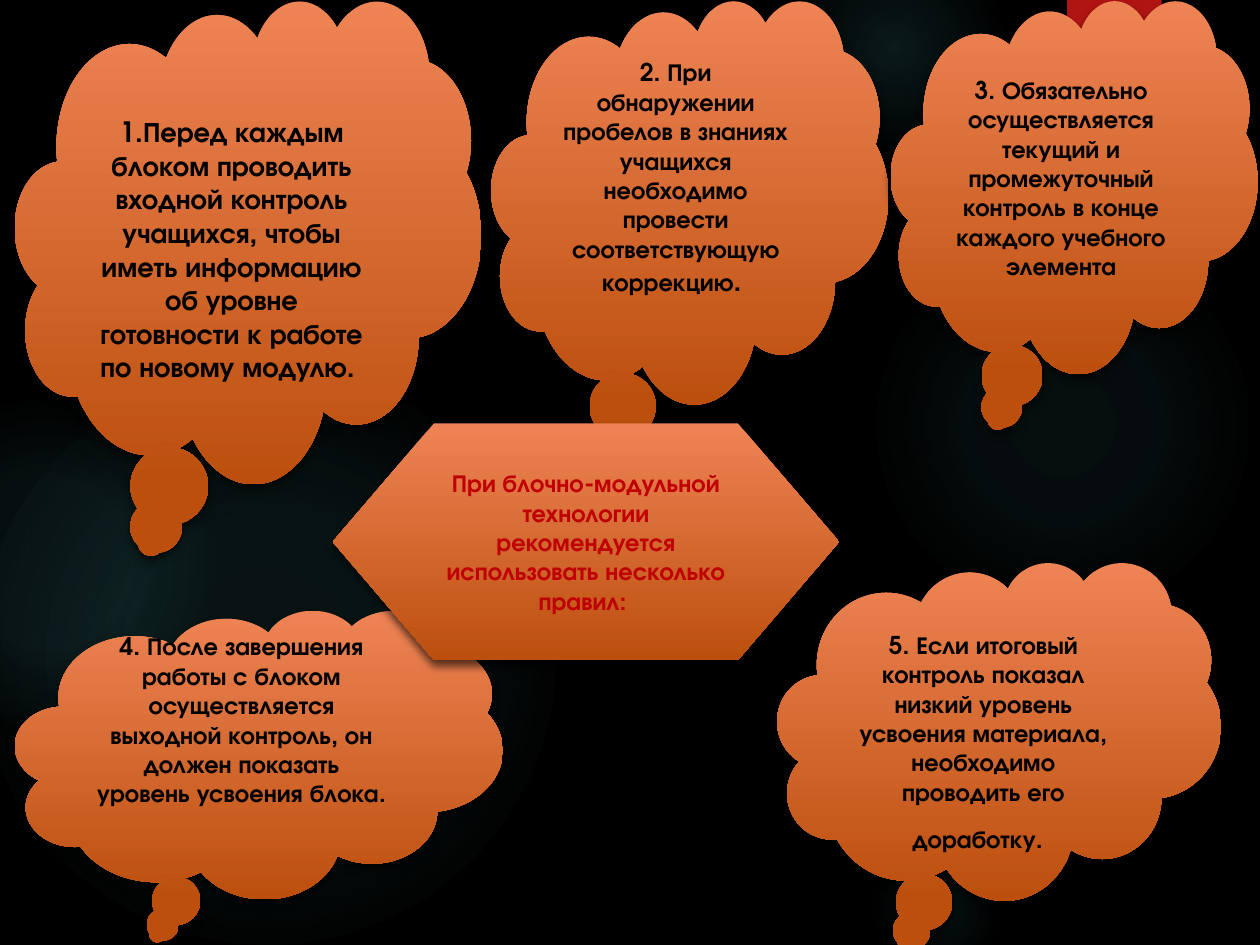
from dataclasses import dataclass

from lxml import etree
from pptx import Presentation
from pptx.dml.color import RGBColor
from pptx.enum import shapes, text
from pptx.oxml import ns
from pptx.util import Inches, Pt


@dataclass(frozen=True)
class Theme:
    font: str = "TeX Gyre Adventor"
    background: str = "000000"
    glow: str = "50B9C1"
    ribbon: str = "B01513"
    top: str = "EE8455"
    bottom: str = "BC4F0E"
    ink: str = "000000"
    accent: str = "C00000"
    body: int = 14
    large: int = 16
    wide: int = 24


T = Theme()
KIND = shapes.MSO_SHAPE

GLOWS = [
    ((6.89, 1.83, 3.08), ((0, 7), (36, 6), (69, 0))),
    ((6.22, -0.5, 1.75), ((0, 14), (36, 7), (73, 0))),
    ((6.89, 6.67, 1.08), ((0, 9), (36, 5), (66, 0))),
    ((-0.17, 2.92, 4.58), ((0, 11), (36, 10), (75, 0))),
    ((-0.92, 3.17, 2.58), ((0, 8), (36, 8), (72, 0))),
]

RULES = [
    ((0.12, 0, 3.7, 3.83), 0.15,
     [("1.Перед каждым блоком проводить входной контроль учащихся, чтобы "
       "иметь информацию об уровне готовности к работе по новому модулю. ", T.large)]),
    ((3.9, 0, 3.15, 3.2), -0.12,
     [("2. При обнаружении пробелов в знаниях учащихся необходимо провести "
       "соответствующую коррекцию", T.body), (". ", T.large)]),
    ((7.07, 0, 2.91, 2.96), 0,
     [("3. Обязательно осуществляется текущий и промежуточный контроль "
       "в конце каждого учебного элемента", T.body)]),
    ((0.12, 4.84, 3.87, 2.29), -0.22,
     [("4. После завершения работы с блоком осуществляется выходной контроль, "
       "он должен показать уровень усвоения блока. ", T.body)]),
    ((6.17, 4.46, 3.52, 2.68), 0.16,
     [("5. Если итоговый контроль показал низкий уровень усвоения материала, "
       "необходимо проводить его доработку.", T.body), (" ", T.wide)]),
]

TOPIC = [("При блочно-модульной технологии рекомендуется использовать "
          "несколько правил: ", T.body)]


def rgb(value):
    return RGBColor.from_string(value)


def node(parent, tag, **attrs):
    return etree.SubElement(parent, ns.qn(tag), {k: str(v) for k, v in attrs.items()})


def add_plain(slide, kind, box):
    s = slide.shapes.add_shape(kind, *map(Inches, box))
    s.shadow.inherit = False
    s.line.fill.background()
    return s


def cast_shadow(s, alpha, blur, dist):
    effects = s._element.spPr.find(ns.qn("a:effectLst"))
    shadow = node(effects, "a:outerShdw", blurRad=Pt(blur), dist=Pt(dist),
                  dir=5400000, algn="ctr", rotWithShape=0)
    color = node(shadow, "a:srgbClr", val="000000")
    node(color, "a:alpha", val=alpha * 1000)


def add_glow(slide, box, stops):
    left, top, size = box
    s = add_plain(slide, KIND.OVAL, (left, top, size, size))
    s.fill.gradient()
    grad = s._element.spPr.find(ns.qn("a:gradFill"))
    for child in list(grad):
        grad.remove(child)
    stop_list = node(grad, "a:gsLst")
    for pos, alpha in stops:
        stop = node(stop_list, "a:gs", pos=pos * 1000)
        color = node(stop, "a:srgbClr", val=T.glow)
        node(color, "a:alpha", val=alpha * 1000)
    circle = node(grad, "a:path", path="circle")
    node(circle, "a:fillToRect", l=50000, t=50000, r=50000, b=50000)


def add_backdrop(slide):
    fill = slide.background.fill
    fill.solid()
    fill.fore_color.rgb = rgb(T.background)
    for box, stops in GLOWS:
        add_glow(slide, box, stops)
    ribbon = add_plain(slide, KIND.RECTANGLE, (8.47, 0, 0.75, 1.2))
    ribbon.fill.solid()
    ribbon.fill.fore_color.rgb = rgb(T.ribbon)
    cast_shadow(ribbon, 45, 3, 2)


def add_bubble(slide, kind, box, runs, color, shift=0):
    s = add_plain(slide, kind, box)
    s.fill.gradient()
    s.fill.gradient_angle = 270
    for stop, value in zip(s.fill.gradient_stops, (T.top, T.bottom)):
        stop.color.rgb = rgb(value)
    cast_shadow(s, 60, 5, 3)

    tf = s.text_frame
    frame = {
        "word_wrap": True,
        "vertical_anchor": text.MSO_ANCHOR.MIDDLE,
        "margin_left": Inches(0.1),
        "margin_right": Inches(0.1),
        "margin_top": Inches(0.05 + 2 * max(shift, 0)),
        "margin_bottom": Inches(0.05 + 2 * max(-shift, 0)),
    }
    for name, value in frame.items():
        setattr(tf, name, value)
    p = tf.paragraphs[0]
    p.alignment = text.PP_ALIGN.CENTER
    for words, size in runs:
        r = p.add_run()
        r.text = words
        for name, value in {"name": T.font, "size": Pt(size), "bold": True}.items():
            setattr(r.font, name, value)
        r.font.color.rgb = rgb(color)


def main():
    prs = Presentation()
    prs.slide_width, prs.slide_height = Inches(10), Inches(7.5)
    slide = prs.slides.add_slide(prs.slide_layouts.get_by_name("Blank"))
    add_backdrop(slide)
    for box, shift, runs in RULES:
        add_bubble(slide, KIND.CLOUD_CALLOUT, box, runs, T.ink, shift)
    add_bubble(slide, KIND.FLOWCHART_PREPARATION, (2.64, 3.36, 4.02, 1.88), TOPIC, T.accent)
    prs.save("out.pptx")


if __name__ == "__main__":
    main()
